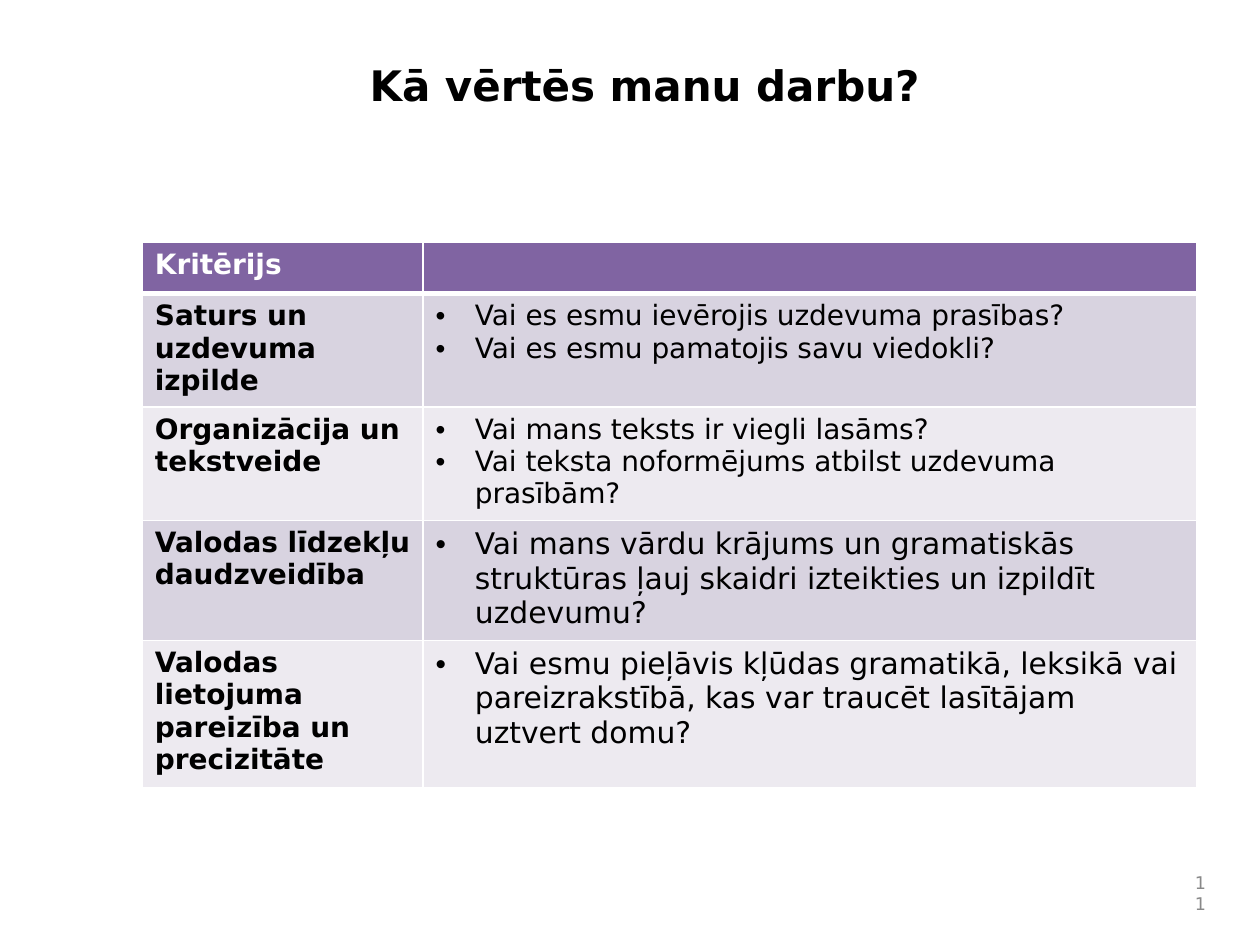
"""Build the slide that lists the criteria for marking a written work."""
from dataclasses import dataclass

from lxml import etree
from pptx import Presentation
from pptx.dml.color import RGBColor
from pptx.enum.text import MSO_ANCHOR, PP_ALIGN
from pptx.oxml.ns import qn
from pptx.util import Cm, Pt

TOP, MIDDLE = MSO_ANCHOR.TOP, MSO_ANCHOR.MIDDLE
LEFT, RIGHT = PP_ALIGN.LEFT, PP_ALIGN.RIGHT


@dataclass(frozen=True)
class Theme:
    font: str = "DejaVu Sans"
    ink: str = "000000"
    white: str = "FFFFFF"
    grey: str = "898989"
    header: str = "8064A2"
    bands: tuple = ("D8D3E0", "EDEAF0")
    title_size: int = 24
    table_size: int = 16
    large_size: int = 17
    number_size: int = 10
    rule: int = 1
    header_rule: int = 3


@dataclass(frozen=True)
class Style:
    size: int
    color: str
    bold: bool = False
    align: PP_ALIGN = LEFT


@dataclass(frozen=True)
class Label:
    text: str
    left: float
    top: float
    width: float
    height: float
    style: Style
    anchor: MSO_ANCHOR = TOP


@dataclass(frozen=True)
class Criterion:
    name: str
    questions: tuple
    size: int


THEME = Theme()
COLUMN_WIDTHS = (5.66, 15.6)
ROW_HEIGHT = 1.04
TABLE_HEIGHT = 10.97
BULLET_INDENT = Cm(0.79)

LABELS = (
    Label("Kā vērtēs manu darbu?", 7.2, 1.07, 16.93, 2.87,
          Style(THEME.title_size, THEME.ink, bold=True)),
    Label("11", 23.71, 17.57, 0.85, 0.85,
          Style(THEME.number_size, THEME.grey, align=RIGHT), MIDDLE),
)

CRITERIA = (
    Criterion("Saturs un uzdevuma izpilde",
              ("Vai es esmu ievērojis uzdevuma prasības?",
               "Vai es esmu pamatojis savu viedokli?"), THEME.table_size),
    Criterion("Organizācija un tekstveide",
              ("Vai mans teksts ir viegli lasāms?",
               "Vai teksta noformējums atbilst uzdevuma prasībām?"), THEME.table_size),
    Criterion("Valodas līdzekļu daudzveidība",
              ("Vai mans vārdu krājums un gramatiskās struktūras ļauj skaidri "
               "izteikties un izpildīt uzdevumu?",), THEME.large_size),
    Criterion("Valodas lietojuma pareizība un precizitāte",
              ("Vai esmu pieļāvis kļūdas gramatikā, leksikā vai pareizrakstībā, "
               "kas var traucēt lasītājam uztvert domu?",), THEME.large_size),
)


def write(frame, lines: tuple, style: Style, bulleted: bool = False) -> None:
    for index, line in enumerate(lines):
        para = frame.paragraphs[0] if index == 0 else frame.add_paragraph()
        para.text = line
        para.alignment = style.align
        if bulleted:
            properties = para._p.get_or_add_pPr()
            properties.set("marL", str(BULLET_INDENT))
            properties.set("indent", str(-BULLET_INDENT))
            etree.SubElement(properties, qn("a:buFont"), typeface="Arial")
            etree.SubElement(properties, qn("a:buChar"), char="•")
        para.font.name = THEME.font
        para.font.size = Pt(style.size)
        para.font.bold = style.bold
        para.font.color.rgb = RGBColor.from_string(style.color)


def add_label(page, label: Label) -> None:
    box = page.shapes.add_textbox(Cm(label.left), Cm(label.top),
                                  Cm(label.width), Cm(label.height))
    box.text_frame.word_wrap = True
    box.text_frame.vertical_anchor = label.anchor
    write(box.text_frame, (label.text,), label.style)


def paint_cell(cell, fill: str, top: int, bottom: int) -> None:
    properties = cell._tc.get_or_add_tcPr()
    edges = {"lnL": THEME.rule, "lnR": THEME.rule, "lnT": top, "lnB": bottom}
    for tag, points in edges.items():
        line = etree.SubElement(properties, qn(f"a:{tag}"), w=str(Pt(points)))
        solid = etree.SubElement(line, qn("a:solidFill"))
        etree.SubElement(solid, qn("a:srgbClr"), val=THEME.white)
    cell.fill.solid()
    cell.fill.fore_color.rgb = RGBColor.from_string(fill)


def add_criteria_table(page) -> None:
    frame = page.shapes.add_table(len(CRITERIA) + 1, len(COLUMN_WIDTHS), Cm(2.87), Cm(4.88),
                                  Cm(sum(COLUMN_WIDTHS)), Cm(TABLE_HEIGHT))
    table = frame.table
    table.first_row = table.horz_banding = False
    for column, width in zip(table.columns, COLUMN_WIDTHS):
        column.width = Cm(width)
    for index, row in enumerate(table.rows):
        row.height = Cm(ROW_HEIGHT)
        fill = THEME.bands[(index - 1) % 2] if index else THEME.header
        top = THEME.header_rule if index == 1 else THEME.rule
        bottom = THEME.rule if index else THEME.header_rule
        for cell in row.cells:
            paint_cell(cell, fill, top, bottom)
    frame.height = Cm(TABLE_HEIGHT)

    write(table.cell(0, 0).text_frame, ("Kritērijs",),
          Style(THEME.table_size, THEME.white, bold=True))
    for index, criterion in enumerate(CRITERIA, start=1):
        write(table.cell(index, 0).text_frame, (criterion.name,),
              Style(THEME.table_size, THEME.ink, bold=True))
        write(table.cell(index, 1).text_frame, criterion.questions,
              Style(criterion.size, THEME.ink), bulleted=True)


def main() -> None:
    deck = Presentation()
    deck.slide_width, deck.slide_height = Cm(25.4), Cm(19.05)
    page = deck.slides.add_slide(deck.slide_layouts[6])
    for label in LABELS:
        add_label(page, label)
    add_criteria_table(page)
    deck.save("out.pptx")


if __name__ == "__main__":
    main()
